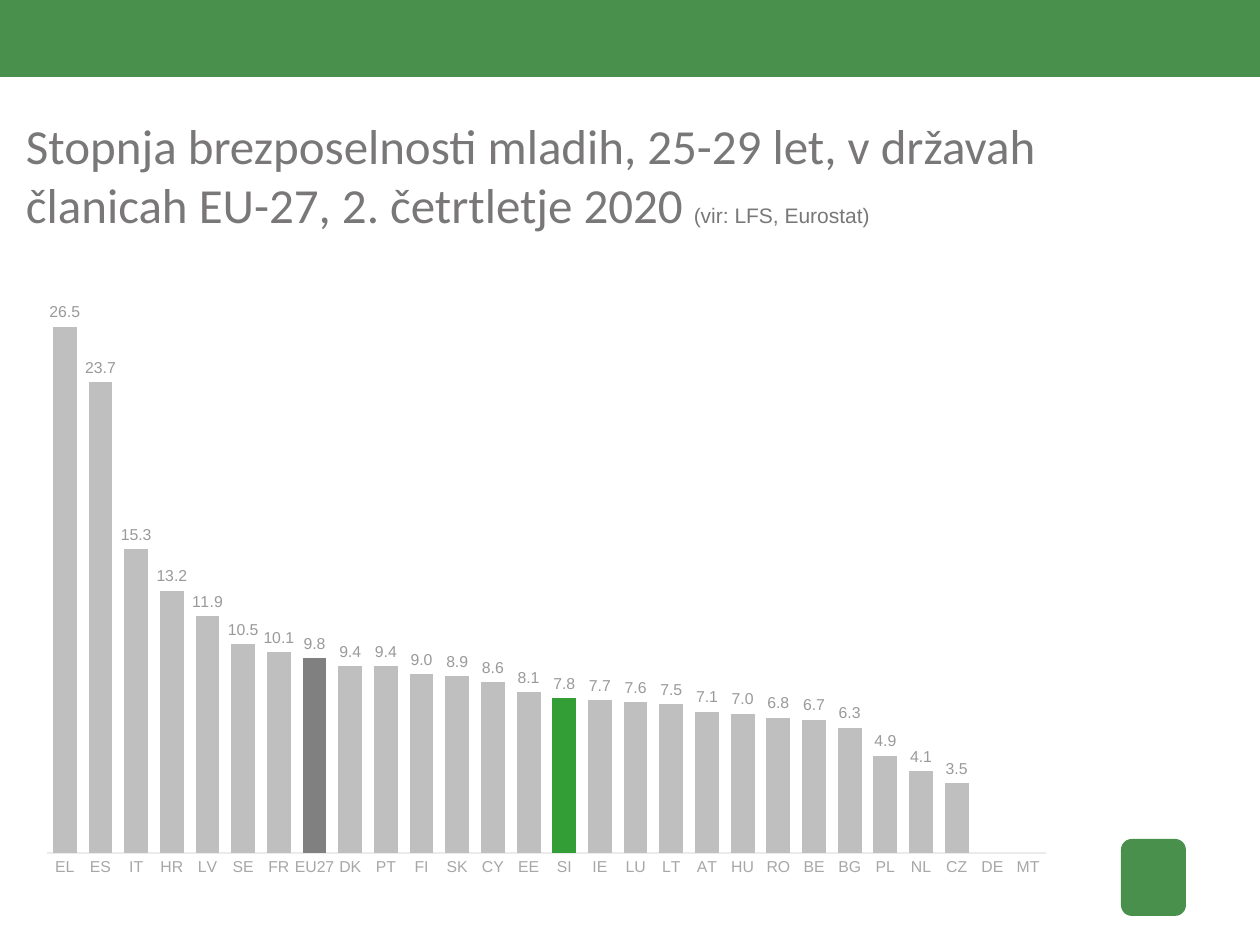
from lxml import etree
from pptx import Presentation
from pptx import util as u
from pptx.chart.data import CategoryChartData
from pptx.dml.color import RGBColor
from pptx.enum import chart as ch, shapes, text
from pptx.oxml.ns import qn

SCALE = 914400 / 126
GREEN, GREY, PALE = "49904D", "797777", "A8A7A7"
RATES = {
    "EL": 26.5, "ES": 23.7, "IT": 15.3, "HR": 13.2, "LV": 11.9, "SE": 10.5,
    "FR": 10.1, "EU27": 9.8, "DK": 9.4, "PT": 9.4, "FI": 9.0, "SK": 8.9,
    "CY": 8.6, "EE": 8.1, "SI": 7.8, "IE": 7.7, "LU": 7.6, "LT": 7.5,
    "AT": 7.1, "HU": 7.0, "RO": 6.8, "BE": 6.7, "BG": 6.3, "PL": 4.9,
    "NL": 4.1, "CZ": 3.5, "DE": None, "MT": None,
}
MARKS = {"EU27": "808080", "SI": "339E35"}


def px(*vals):
    """Turn px lengths into EMU."""
    return [u.Emu(round(v * SCALE)) for v in vals]


def paint(fill, hue):
    """Give a fill one solid colour."""
    fill.solid()
    fill.fore_color.rgb = RGBColor.from_string(hue)


def style(font, size, hue, face="Arial"):
    """Set size, colour and face of a font."""
    font.size, font.name = u.Pt(size), face
    font.color.rgb = RGBColor.from_string(hue)


def write(para, words, **form):
    """Add a formatted run to a paragraph."""
    run = para.add_run()
    run.text = words
    style(run.font, **form)


def block(slide, box, kind):
    """Draw a plain green shape in the box."""
    shape = slide.shapes.add_shape(kind, *px(*box))
    shape.shadow.inherit = False
    paint(shape.fill, GREEN)
    shape.line.fill.background()


def title(slide, box):
    """Write the heading and its data source."""
    frame = slide.shapes.add_textbox(*px(*box)).text_frame
    frame.word_wrap = True
    frame.vertical_anchor = text.MSO_ANCHOR.TOP
    frame.margin_left = frame.margin_right = 0
    frame.margin_top = frame.margin_bottom = 0
    para = frame.paragraphs[0]
    write(para, "Stopnja brezposelnosti mladih, 25-29 let, v državah "
          "članicah EU-27, 2. četrtletje 2020 ", size=28, hue=GREY, face="Calibri")
    write(para, "(vir: LFS, Eurostat)", size=12, hue=GREY)


def layout(chart, box, inner):
    """Fix the inner plot area, given in px within the chart box."""
    plot = chart.element.find(".//" + qn("c:plotArea"))
    for old in plot.findall(qn("c:layout")):
        plot.remove(old)
    node = etree.Element(qn("c:layout"))
    plot.insert(0, node)
    man = etree.SubElement(node, qn("c:manualLayout"))
    pairs = [("layoutTarget", "inner"), ("xMode", "edge"), ("yMode", "edge")]
    pairs += [(key, str(round(part / whole, 4)))
              for key, part, whole in zip("xywh", inner, box[2:] * 2)]
    for key, val in pairs:
        etree.SubElement(man, qn("c:" + key)).set("val", val)


def axes(chart):
    """Style the country axis and hide the value axis."""
    cat, val = chart.category_axis, chart.value_axis
    for axis in (cat, val):
        axis.has_major_gridlines = False
        axis.major_tick_mark = axis.minor_tick_mark = ch.XL_TICK_MARK.NONE
        style(axis.tick_labels.font, 9, PALE)
    cat.format.line.width = u.Pt(1.5)
    cat.format.line.color.rgb = RGBColor.from_string("EBEBEB")
    val.minimum_scale, val.maximum_scale = 0, 30
    val.tick_label_position = ch.XL_TICK_LABEL_POSITION.NONE
    val.format.line.fill.background()


def bars(slide, box):
    """Chart the rates with the marked countries in their own colours."""
    data = CategoryChartData(number_format="0.0")
    data.categories = list(RATES)
    data.add_series("Series 1", RATES.values())
    chart = slide.shapes.add_chart(
        ch.XL_CHART_TYPE.COLUMN_CLUSTERED, *px(*box), data).chart
    chart.has_legend = chart.has_title = False
    style(chart.font, 10, GREY)
    plot = chart.plots[0]
    plot.gap_width, plot.overlap, plot.vary_by_categories = 50, -27, False
    row = plot.series[0]
    row.invert_if_negative = False
    paint(row.format.fill, "BFBFBF")
    for i, code in enumerate(RATES):
        if code in MARKS:
            paint(row.points[i].format.fill, MARKS[code])
    labels = row.data_labels
    labels.show_value = True
    labels.number_format, labels.number_format_is_linked = "0.0", False
    labels.position = ch.XL_LABEL_POSITION.OUTSIDE_END
    style(labels.font, 9, "9B9999")
    axes(chart)
    layout(chart, box, (21, 13, 999, 596))


def main():
    """Build and save the slide."""
    deck = Presentation()
    deck.slide_width, deck.slide_height = px(1260, 945)
    slide = deck.slides.add_slide(deck.slide_layouts[6])
    block(slide, (0, -1, 1260, 78), shapes.MSO_SHAPE.RECTANGLE)
    block(slide, (1121, 839, 65, 77), shapes.MSO_SHAPE.ROUNDED_RECTANGLE)
    title(slide, (26, 116, 1167, 90))
    bars(slide, (26, 244, 1040, 645))
    deck.save("out.pptx")


if __name__ == "__main__":
    main()
